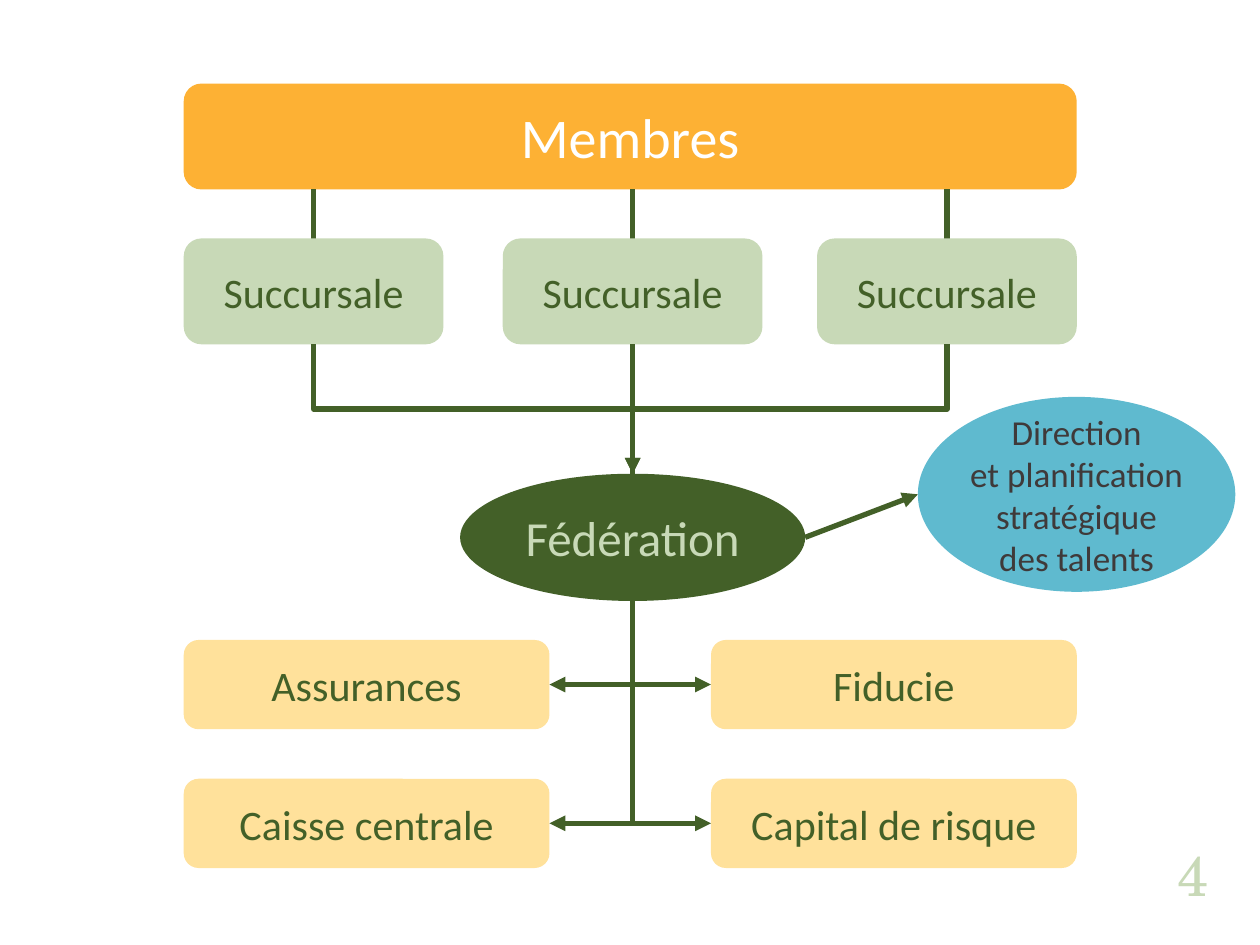
from pptx import Presentation
from pptx.dml.color import RGBColor
from pptx.enum.shapes import MSO_CONNECTOR, MSO_SHAPE
from pptx.enum.text import MSO_ANCHOR, PP_ALIGN
from pptx.oxml.ns import qn
from pptx.util import Pt
from lxml.etree import SubElement

GREEN, PALE_GREEN = "436028", "C8D9B7"
ORANGE, YELLOW, BLUE = "FDB134", "FFE19B", "5FBACF"
WHITE, GREY = "FFFFFF", "3F3A3A"


def color(value):
    return RGBColor.from_string(value)


def write_text(shape, text, size, text_color, font="Calibri",
               anchor=MSO_ANCHOR.MIDDLE, wrap=True):
    frame = shape.text_frame
    frame_format = {
        "word_wrap": wrap, "vertical_anchor": anchor,
        "margin_left": 0, "margin_right": 0, "margin_top": 0, "margin_bottom": 0,
    }
    for name, value in frame_format.items():
        setattr(frame, name, value)
    paragraph = frame.paragraphs[0]
    paragraph.text = text
    paragraph.alignment = PP_ALIGN.CENTER
    for name, value in {"name": font, "size": Pt(size)}.items():
        setattr(paragraph.font, name, value)
    paragraph.font.color.rgb = color(text_color)


def add_node(slide, kind, box, text, fill, size, text_color, wrap=True):
    shape = slide.shapes.add_shape(kind, *map(Pt, box))
    shape.shadow.inherit = False
    shape.fill.solid()
    shape.fill.fore_color.rgb = color(fill)
    shape.line.fill.background()
    write_text(shape, text, size, text_color, wrap=wrap)


def add_line(slide, start, end, arrow=False, kind=MSO_CONNECTOR.STRAIGHT):
    connector = slide.shapes.add_connector(kind, *map(Pt, (*start, *end)))
    connector.line.color.rgb = color(GREEN)
    connector.line.width = Pt(3)
    properties = connector._element.spPr
    if arrow:
        SubElement(properties.find(qn("a:ln")), qn("a:tailEnd"), type="triangle")
    SubElement(properties, qn("a:effectLst"))
    return connector


def add_elbow(slide, start, end, preset):
    (x1, y1), (x2, y2) = start, end
    length, spread = y2 - y1, abs(x2 - x1)
    left = (x1 + x2 - length) / 2
    top = (y1 + y2 - spread) / 2
    connector = add_line(slide, (left, top), (left + length, top + spread),
                         arrow=True, kind=MSO_CONNECTOR.ELBOW)
    properties = connector._element.spPr
    properties.find(qn("a:prstGeom")).set("prst", preset)
    transform = properties.find(qn("a:xfrm"))
    if x2 > x1:
        transform.set("rot", "16200000")
        transform.set("flipH", "1")
    else:
        transform.set("rot", "5400000")


def add_branches(slide, box, hub):
    left, top, width, height = box
    row_height, branch_width = 60.5, 148.4
    branch_top = top + height - row_height
    lefts = (left, hub[0] - branch_width / 2, left + width - branch_width)
    add_node(slide, MSO_SHAPE.ROUNDED_RECTANGLE, (left, top, width, row_height),
             "Membres", ORANGE, 32, WHITE)
    for branch_left in lefts:
        center = branch_left + branch_width / 2
        bottom = (center, top + height)
        add_line(slide, (center, top + row_height), (center, branch_top))
        add_node(slide, MSO_SHAPE.ROUNDED_RECTANGLE,
                 (branch_left, branch_top, branch_width, row_height),
                 "Succursale", PALE_GREEN, 24, GREEN)
        if center == hub[0]:
            add_line(slide, bottom, hub)
        else:
            add_elbow(slide, bottom, hub, "bentConnector3")


def add_services(slide, box, hub):
    left, top, width, height = box
    node_width, node_height = 209, 51
    rows = (("Assurances", "Fiducie"), ("Caisse centrale", "Capital de risque"))
    for row, (left_text, right_text) in enumerate(rows):
        node_top = top + row * (height - node_height)
        middle = node_top + node_height / 2
        right = left + width - node_width
        for node_left, edge, text in ((left, left + node_width, left_text),
                                      (right, right, right_text)):
            add_node(slide, MSO_SHAPE.ROUNDED_RECTANGLE,
                     (node_left, node_top, node_width, node_height),
                     text, YELLOW, 24, GREEN)
            add_elbow(slide, hub, (edge, middle), "bentConnector2")


def add_federation(slide, box, talent_box):
    left, top, width, height = box
    talent_left, talent_top, _, talent_height = talent_box
    add_node(slide, MSO_SHAPE.OVAL, box, "Fédération", GREEN, 28, PALE_GREEN, wrap=False)
    add_node(slide, MSO_SHAPE.OVAL, talent_box,
             "Direction\vet planification\vstratégique\vdes talents",
             BLUE, 20, GREY, wrap=False)
    add_line(slide, (left + width, top + height / 2),
             (talent_left, talent_top + talent_height / 2), arrow=True)


def add_page_number(slide, box):
    number = slide.shapes.add_textbox(*map(Pt, box))
    write_text(number, "4", 32, PALE_GREEN, "TeX Gyre Schola", MSO_ANCHOR.BOTTOM)


def main():
    presentation = Presentation()
    presentation.slide_width, presentation.slide_height = Pt(720), Pt(540)
    slide = presentation.slides.add_slide(presentation.slide_layouts[6])
    left, width, center = 105, 510.3, 361.5
    federation = (center - 98.6, 270.7, 197.2, 72.7)
    federation_bottom = federation[1] + federation[3]
    add_branches(slide, (left, 47.8, width, 149), (center, federation[1]))
    add_services(slide, (left, 365.7, width, 130.3), (center, federation_bottom))
    add_federation(slide, federation, (524.5, 226.8, 181.4, 111.4))
    add_page_number(slide, (651, 472.5, 61, 46))
    presentation.save("out.pptx")


if __name__ == "__main__":
    main()
